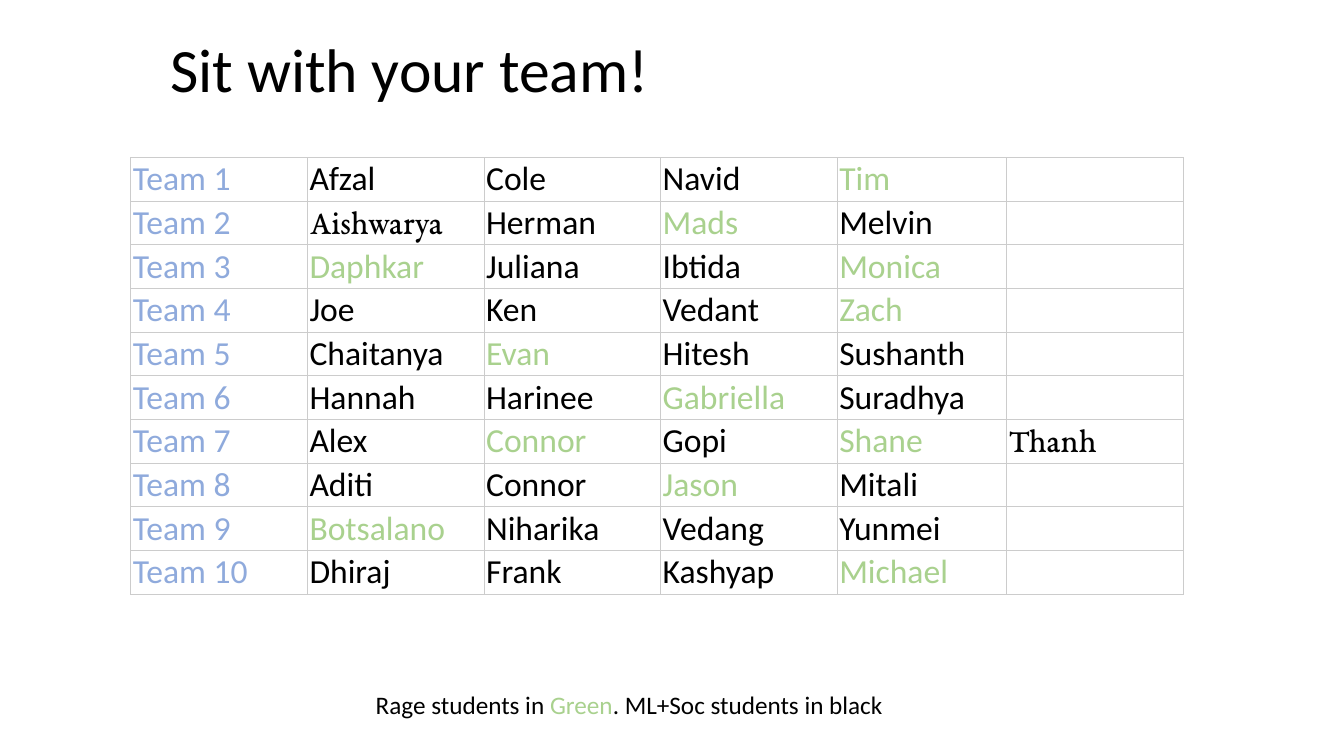
from dataclasses import dataclass

import lxml.etree
import pptx
import pptx.dml.color
import pptx.enum.text
import pptx.oxml.ns
import pptx.util

Cm = pptx.util.Cm
Pt = pptx.util.Pt

COLORS = {
    "text": "000000",
    "team": "8FAADC",
    "rage": "A9D18E",
    "grid": "CCCCCC",
}
BODY_FONT = "Calibri"
SERIF_FONT = "EB Garamond"
SERIF_NAMES = {"Aishwarya", "Thanh"}
COLUMN_WIDTHS = [4.45, 4.45, 4.45, 4.45, 4.27, 4.45]
ROW_HEIGHT = 1.1


@dataclass(frozen=True)
class Team:
    members: tuple[str, ...]
    rage: tuple[str, ...] = ()


@dataclass(frozen=True)
class Box:
    left: float
    top: float
    width: float
    height: float


TEAMS = [
    Team(("Afzal", "Cole", "Navid", "Tim"), rage=("Tim",)),
    Team(("Aishwarya", "Herman", "Mads", "Melvin"), rage=("Mads",)),
    Team(("Daphkar", "Juliana", "Ibtida", "Monica"), rage=("Daphkar", "Monica")),
    Team(("Joe", "Ken", "Vedant", "Zach"), rage=("Zach",)),
    Team(("Chaitanya", "Evan", "Hitesh", "Sushanth"), rage=("Evan",)),
    Team(("Hannah", "Harinee", "Gabriella", "Suradhya"), rage=("Gabriella",)),
    Team(("Alex", "Connor", "Gopi", "Shane", "Thanh"), rage=("Connor", "Shane")),
    Team(("Aditi", "Connor", "Jason", "Mitali"), rage=("Jason",)),
    Team(("Botsalano", "Niharika", "Vedang", "Yunmei"), rage=("Botsalano",)),
    Team(("Dhiraj", "Frank", "Kashyap", "Michael"), rage=("Michael",)),
]


def set_color(font, color: str) -> None:
    font.color.rgb = pptx.dml.color.RGBColor.from_string(COLORS[color])


def set_font(font, size: float, color: str, name: str = BODY_FONT) -> None:
    font.name = name
    font.size = Pt(size)
    set_color(font, color)


def add_text_frame(slide, box: Box, wrap: bool):
    frame = slide.shapes.add_textbox(
        Cm(box.left), Cm(box.top), Cm(box.width), Cm(box.height)
    ).text_frame
    frame.word_wrap = wrap
    return frame


def add_title(slide) -> None:
    frame = add_text_frame(slide, Box(4.04, 0.36, 25.81, 2.92), wrap=True)
    frame.vertical_anchor = pptx.enum.text.MSO_ANCHOR.MIDDLE
    title = frame.paragraphs[0]
    title.text = "Sit with your team!"
    title.line_spacing = 0.9
    set_font(title.font, 44, "text")


def add_legend(slide) -> None:
    frame = add_text_frame(slide, Box(9.22, 17.25, 13.44, 1.02), wrap=False)
    legend = frame.paragraphs[0]
    for text, color in (
        ("Rage students in ", "text"),
        ("Green", "rage"),
        (". ML+Soc students in black", "text"),
    ):
        run = legend.add_run()
        run.text = text
        set_font(run.font, 18, color)


def add_borders(cell) -> None:
    properties = cell._tc.get_or_add_tcPr()
    qn = pptx.oxml.ns.qn
    for position, side in enumerate(("lnL", "lnR", "lnT", "lnB")):
        line = lxml.etree.Element(qn(f"a:{side}"), w=str(Pt(0.75)))
        fill = lxml.etree.SubElement(line, qn("a:solidFill"))
        lxml.etree.SubElement(fill, qn("a:srgbClr"), val=COLORS["grid"])
        properties.insert(position, line)


def fill_cell(cell, text: str, color: str) -> None:
    cell.fill.background()
    cell.vertical_anchor = pptx.enum.text.MSO_ANCHOR.BOTTOM
    cell.margin_left = cell.margin_right = Cm(0.05)
    cell.margin_top = cell.margin_bottom = Cm(0.03)
    add_borders(cell)
    entry = cell.text_frame.paragraphs[0]
    if text:
        entry.text = text
    font_name = SERIF_FONT if text in SERIF_NAMES else BODY_FONT
    set_font(entry.font, 24, color, font_name)


def add_team_table(slide) -> None:
    roster = slide.shapes.add_table(
        len(TEAMS), len(COLUMN_WIDTHS), Cm(3.3), Cm(3.97),
        Cm(sum(COLUMN_WIDTHS)), Cm(ROW_HEIGHT * len(TEAMS)),
    ).table
    roster.first_row = roster.horz_banding = False
    for column, width in zip(roster.columns, COLUMN_WIDTHS):
        column.width = Cm(width)
    for number, (row, team) in enumerate(zip(roster.rows, TEAMS), start=1):
        row.height = Cm(ROW_HEIGHT)
        label, *seats = row.cells
        fill_cell(label, f"Team {number}", "team")
        for seat, cell in enumerate(seats):
            name = team.members[seat] if seat < len(team.members) else ""
            fill_cell(cell, name, "rage" if name in team.rage else "text")


def main() -> None:
    presentation = pptx.Presentation()
    presentation.slide_width = Cm(33.87)
    presentation.slide_height = Cm(19.05)
    slide = presentation.slides.add_slide(presentation.slide_layouts[6])
    add_title(slide)
    add_team_table(slide)
    add_legend(slide)
    presentation.save("out.pptx")


if __name__ == "__main__":
    main()
